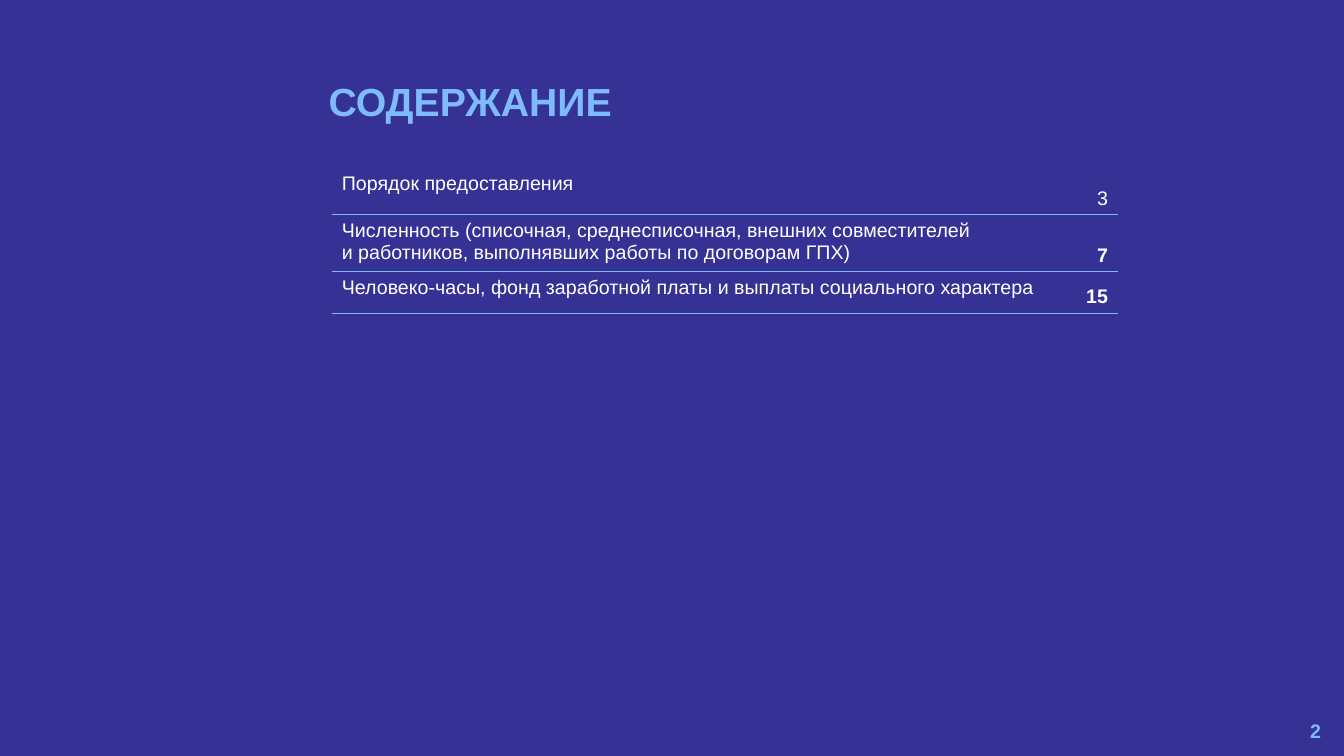
from pptx import Presentation
from pptx.dml.color import RGBColor
from pptx.enum import text
from pptx.oxml import parse_xml
from pptx.oxml.ns import nsdecls
from pptx.util import Inches, Pt

# Content: entry, page, bold page, row height
TITLE = "СОДЕРЖАНИЕ"
NUMBER = "2"
ROWS = [
    ("Порядок предоставления", "3", False, 0.47),
    ("Численность (списочная, среднесписочная, внешних совместителей \v"
     "и работников, выполнявших работы по договорам ГПХ)", "7", True, 0.54),
    ("Человеко-часы, фонд заработной платы и выплаты социального характера",
     "15", True, 0.41),
]
COLS = [7.11, 0.69]

FONT = "Arial"
NAVY = RGBColor(0x36, 0x31, 0x94)
SKY = RGBColor(0x7D, 0xBB, 0xFC)
WHITE = RGBColor(0xFF, 0xFF, 0xFF)
LEFT = text.PP_ALIGN.LEFT
RIGHT = text.PP_ALIGN.RIGHT
TOP = text.MSO_ANCHOR.TOP
MIDDLE = text.MSO_ANCHOR.MIDDLE
BOTTOM = text.MSO_ANCHOR.BOTTOM


def write(frame, words, size, color, bold, align):
    frame.text = words
    par = frame.paragraphs[0]
    par.alignment = align
    font = par.font
    font.name, font.size, font.bold = FONT, Pt(size), bold
    font.color.rgb = color
    return par


def label(slide, box, words, size, align, anchor):
    frame = slide.shapes.add_textbox(*map(Inches, box)).text_frame
    frame.word_wrap = True
    frame.vertical_anchor = anchor
    return write(frame, words, size, SKY, True, align)


def border(cell, side, shown):
    fill = (f'<a:solidFill><a:srgbClr val="{SKY}"/></a:solidFill>'
            if shown else "<a:noFill/>")
    cell._tc.get_or_add_tcPr().append(parse_xml(
        f'<a:ln{side} {nsdecls("a")} w="{Pt(1)}">{fill}</a:ln{side}>'))


def contents(slide):
    high = sum(row[3] for row in ROWS)
    table = slide.shapes.add_table(
        len(ROWS), len(COLS), Inches(3.29), Inches(1.66),
        Inches(sum(COLS)), Inches(high)).table
    table.first_row = table.horz_banding = False
    for col, wide in zip(table.columns, COLS):
        col.width = Inches(wide)
    for i, (entry, page, bold, tall) in enumerate(ROWS):
        table.rows[i].height = Inches(tall)
        parts = [(entry, False, LEFT, TOP), (page, bold, RIGHT, BOTTOM)]
        for j, (words, heavy, align, anchor) in enumerate(parts):
            cell = table.cell(i, j)
            write(cell.text_frame, words, 14, WHITE, heavy, align)
            cell.vertical_anchor = anchor
            # Rules run under every row, none above the first
            for side, shown in zip("LRTB", (False, False, i > 0, True)):
                border(cell, side, shown)
            cell.fill.background()


def main():
    deck = Presentation()
    deck.slide_width, deck.slide_height = Inches(13.33), Inches(7.5)
    slide = deck.slides.add_slide(deck.slide_layouts[6])
    slide.background.fill.solid()
    slide.background.fill.fore_color.rgb = NAVY

    # Title, table, slide number
    title = label(slide, (3.16, 0.77, 3.51, 0.65), TITLE, 28, LEFT, TOP)
    title.line_spacing = 0.9
    contents(slide)
    label(slide, (10.2, 7.05, 3, 0.4), NUMBER, 14, RIGHT, MIDDLE)

    deck.save("out.pptx")


if __name__ == "__main__":
    main()
